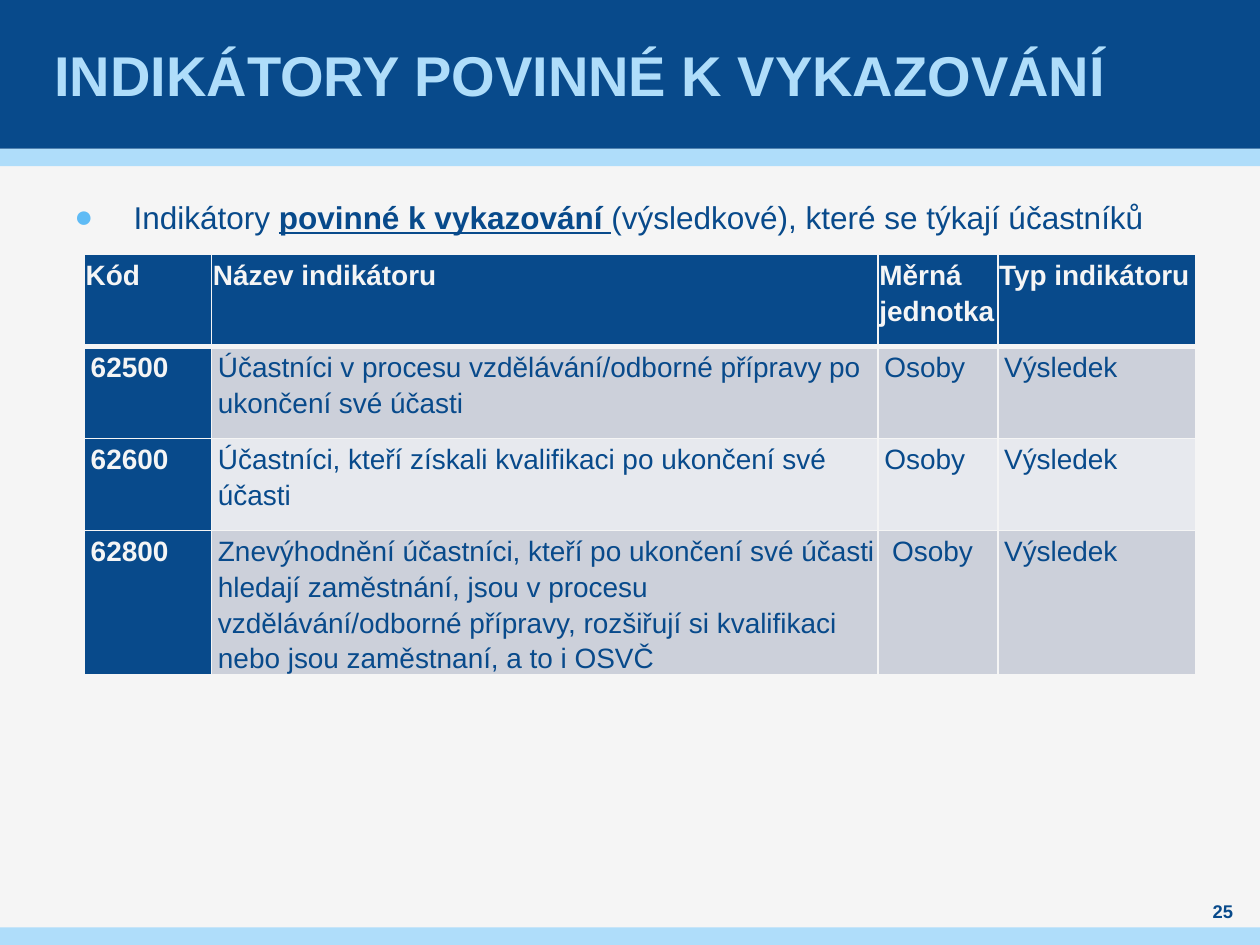
from lxml.etree import SubElement
from pptx import Presentation
from pptx.dml.color import RGBColor
from pptx.enum.shapes import MSO_SHAPE as Shape
from pptx.enum.text import MSO_ANCHOR as Anchor, MSO_AUTO_SIZE as AutoSize, PP_ALIGN as Align
from pptx.oxml import parse_xml
from pptx.oxml.ns import nsdecls, qn
from pptx.util import Inches, Pt

WIDTH, HEIGHT = 10, 7.5
NAVY, SKY, PAPER, DOT = "084A8B", "AFDDFA", "F5F5F5", "5FBBF5"
STRIPES = ("CCD0DA", "E7E9EE")
COLUMNS = (1.01, 5.29, 0.95, 1.57)
ROWS = (0.73, 0.73, 0.73, 1)
INDICATORS = (
    ("Kód", "Název indikátoru", "Měrná jednotka", "Typ indikátoru"),
    ("62500", "Účastníci v procesu vzdělávání/odborné přípravy po ukončení své účasti",
     "Osoby", "Výsledek"),
    ("62600", "Účastníci, kteří získali kvalifikaci po ukončení své účasti",
     "Osoby", "Výsledek"),
    ("62800", "Znevýhodnění účastníci, kteří po ukončení své účasti hledají zaměstnání, "
     "jsou v procesu vzdělávání/odborné přípravy, rozšiřují si kvalifikaci "
     "nebo jsou zaměstnaní, a to i OSVČ", " Osoby", "Výsledek"),
)


def color(value):
    """Turn a hex string into a colour."""
    return RGBColor.from_string(value)


def place(part, box):
    """Move a part to the box it is given."""
    part.left, part.top, part.width, part.height = map(Inches, box)


def add_run(paragraph, wording, size, ink, bold=False, underline=False):
    """Add one formatted run."""
    run = paragraph.add_run()
    run.text = wording
    font = run.font
    font.name, font.size, font.bold, font.underline = "Arial", Pt(size), bold, underline
    font.color.rgb = color(ink)


def prepare_frame(frame, anchor, side=0):
    """Set the margins, anchor and wrapping of a text frame."""
    frame.margin_left = frame.margin_right = Inches(side)
    frame.margin_top = frame.margin_bottom = 0
    frame.word_wrap, frame.auto_size, frame.vertical_anchor = True, AutoSize.NONE, anchor
    return frame.paragraphs[0]


def add_band(slide, box, fill):
    """Draw a plain band behind the other parts."""
    band = slide.shapes.add_shape(Shape.RECTANGLE, *map(Inches, box))
    band.shadow.inherit = False
    band.fill.solid()
    band.fill.fore_color.rgb = color(fill)
    band.line.fill.background()
    slide.shapes.element.insert(2, band.element)


def fill_title(slide, box):
    """Write the heading."""
    title = slide.shapes.title
    place(title, box)
    heading = prepare_frame(title.text_frame, Anchor.MIDDLE, 0.04)
    heading.alignment = Align.LEFT
    add_run(heading, "INDIKÁTORY POVINNÉ K VYKAZOVÁNÍ", 32, SKY, bold=True)


def fill_body(slide, box):
    """Write the bulleted introduction."""
    body = slide.placeholders[1]
    place(body, box)
    intro = prepare_frame(body.text_frame, Anchor.TOP)
    intro.level = 1
    intro.line_spacing = Pt(28.8)
    intro.space_before = intro.space_after = Pt(6)
    add_run(intro, "Indikátory ", 18, NAVY)
    add_run(intro, "povinné k vykazování ", 18, NAVY, bold=True, underline=True)
    add_run(intro, "(výsledkové), které se týkají účastníků", 18, NAVY)
    layout = intro._p.get_or_add_pPr()
    layout.set("marL", str(Inches(0.47)))
    layout.set("indent", str(Inches(-0.47)))
    SubElement(SubElement(layout, qn("a:buClr")), qn("a:srgbClr"), val=DOT)
    SubElement(layout, qn("a:buFont"), typeface="Arial")
    SubElement(layout, qn("a:buChar"), char="●")


def border_cell(cell, top, bottom):
    """Give a cell its four borders, with widths in points."""
    sides = (("L", 1), ("R", 1), ("T", top), ("B", bottom))
    for position, (side, weight) in enumerate(sides):
        cell._tc.get_or_add_tcPr().insert(position, parse_xml(
            f'<a:ln{side} {nsdecls("a")} w="{Pt(weight)}"><a:solidFill>'
            f'<a:srgbClr val="{PAPER}"/></a:solidFill></a:ln{side}>'))


def fill_cell(cell, wording, row, column):
    """Write and format one cell of the table."""
    header = row == 0
    strong = header or column == 0
    cell.margin_left = cell.margin_right = cell.margin_top = Inches(0.01)
    cell.margin_bottom = 0
    cell.fill.solid()
    cell.fill.fore_color.rgb = color(NAVY if strong else STRIPES[(row - 1) % 2])
    border_cell(cell, 3 if row == 1 else 1, 3 if header else 1)
    entry = cell.text_frame.paragraphs[0]
    entry.line_spacing = 1.15
    entry.space_before = Pt(0 if header else 3)
    entry.space_after = Pt(10 if header else 3)
    if not header:
        entry._p.get_or_add_pPr().set("marL", str(Inches(0.04)))
    add_run(entry, wording, 16, PAPER if strong else NAVY, bold=strong)


def add_indicators(slide, box):
    """Build the table of indicators, sharing the box among its columns and rows."""
    left, top, width, height = box
    table = slide.shapes.add_table(len(ROWS), len(COLUMNS), *map(Inches, box)).table
    for column, share in zip(table.columns, COLUMNS):
        column.width = Inches(width * share / sum(COLUMNS))
    for row, share in zip(table.rows, ROWS):
        row.height = Inches(height * share / sum(ROWS))
    for r, record in enumerate(INDICATORS):
        for c, wording in enumerate(record):
            fill_cell(table.cell(r, c), wording, r, c)


def add_page_number(slide, box):
    """Write the page number."""
    number = slide.shapes.add_textbox(*map(Inches, box))
    page = prepare_frame(number.text_frame, Anchor.MIDDLE)
    page.alignment = Align.CENTER
    add_run(page, "25", 10.5, NAVY, bold=True)


def main():
    """Build and save the slide."""
    deck = Presentation()
    deck.slide_width, deck.slide_height = Inches(WIDTH), Inches(HEIGHT)
    slide = deck.slides.add_slide(deck.slide_layouts[1])
    slide.background.fill.solid()
    slide.background.fill.fore_color.rgb = color(PAPER)
    head, stripe = 1.18, 0.14
    add_band(slide, (0, HEIGHT - stripe, WIDTH, stripe), SKY)
    add_band(slide, (0, 0, WIDTH, head), NAVY)
    add_band(slide, (0, head, WIDTH, stripe), SKY)
    fill_title(slide, (0.39, 0, 9.21, head))
    fill_body(slide, (0.59, 1.47, 8.82, 5.23))
    add_page_number(slide, (9.45, 7.13, 0.51, 0.2))
    add_indicators(slide, (0.67, 2.02, sum(COLUMNS), sum(ROWS)))
    deck.save("out.pptx")


if __name__ == "__main__":
    main()
